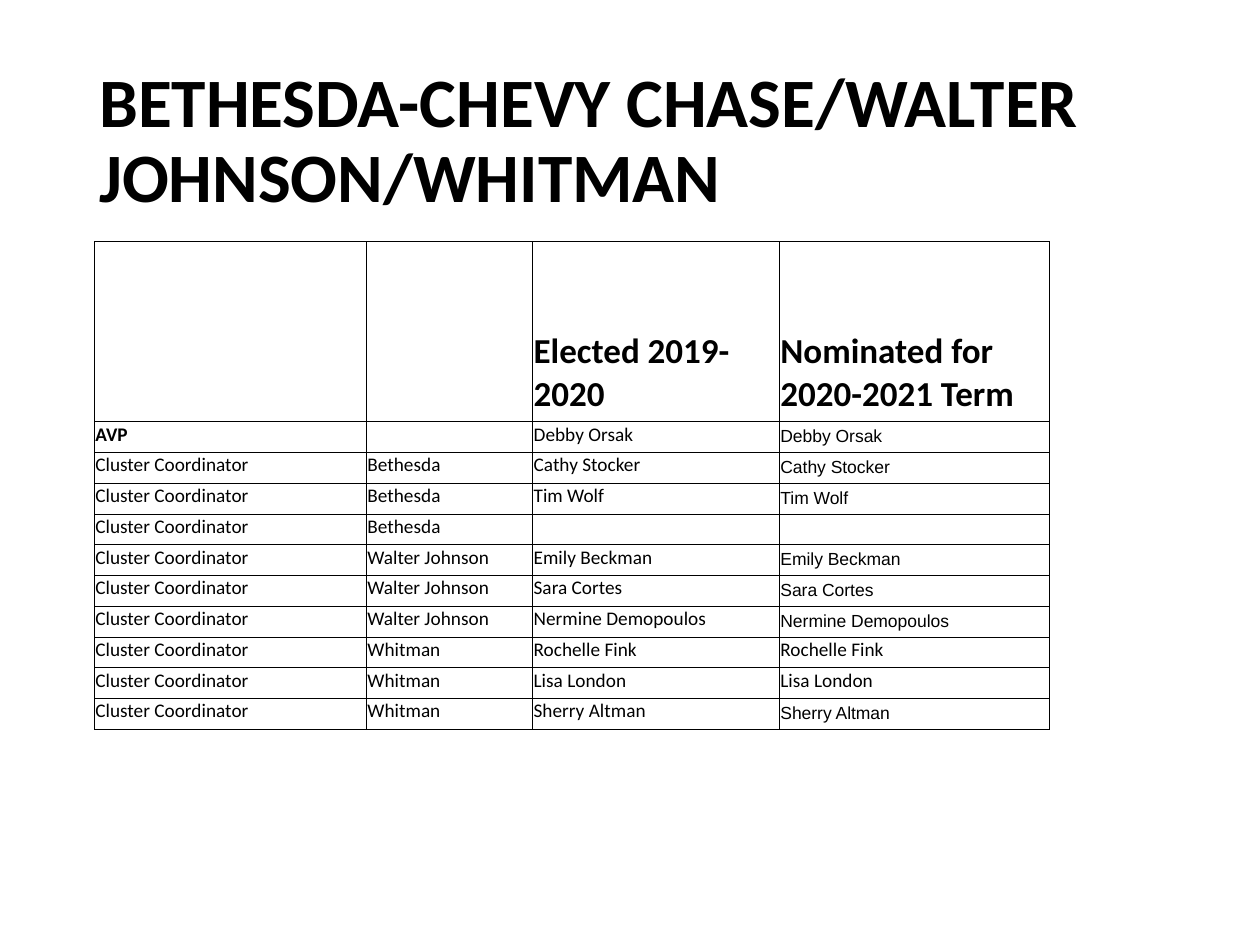
from dataclasses import dataclass

import pptx
import pptx.dml.color
import pptx.enum.text
import pptx.oxml
import pptx.oxml.ns
import pptx.util

Pt = pptx.util.Pt
BLACK = pptx.dml.color.RGBColor(0, 0, 0)
WHITE = pptx.dml.color.RGBColor(255, 255, 255)

COLUMN_WIDTHS = (155.5, 95, 141, 154)
HEADER_HEIGHT = 103
ROW_HEIGHT = 17.4
BORDER_WIDTH = 0.5
HEADERS = ("", "", "Elected 2019-2020", "Nominated for 2020-2021 Term")
WHITE_CELLS = {(1, 0), (1, 1), (2, 0), (2, 1), (2, 2), (10, 2)}


@dataclass(frozen=True)
class Style:
    size: float
    name: str = "Calibri"
    bold: bool = False


TITLE = Style(39.6, bold=True)
HEADER = Style(20, bold=True)
ROLE = Style(11, bold=True)
BODY = Style(11)
NOMINEE = Style(10, "Arial")


@dataclass(frozen=True)
class Post:
    """A post whose holder is nominated again for the next term."""
    role: str
    school: str
    person: str
    role_style: Style = BODY
    nominee_style: Style = NOMINEE


COORDINATOR = "Cluster Coordinator"
POSTS = (
    Post("AVP", "", "Debby Orsak", role_style=ROLE),
    Post(COORDINATOR, "Bethesda", "Cathy Stocker"),
    Post(COORDINATOR, "Bethesda", "Tim Wolf"),
    Post(COORDINATOR, "Bethesda", ""),
    Post(COORDINATOR, "Walter Johnson", "Emily Beckman"),
    Post(COORDINATOR, "Walter Johnson", "Sara Cortes"),
    Post(COORDINATOR, "Walter Johnson", "Nermine Demopoulos"),
    Post(COORDINATOR, "Whitman", "Rochelle Fink", nominee_style=BODY),
    Post(COORDINATOR, "Whitman", "Lisa London", nominee_style=BODY),
    Post(COORDINATOR, "Whitman", "Sherry Altman"),
)


def set_text(tf, text: str, style: Style) -> None:
    tf.text = text
    p = tf.paragraphs[0]
    p.alignment = pptx.enum.text.PP_ALIGN.LEFT
    for r in p.runs:
        r.font.size = Pt(style.size)
        r.font.name = style.name
        r.font.bold = style.bold
        r.font.color.rgb = BLACK
    if not text:
        # An empty cell needs a small end mark, or its row grows.
        end = pptx.oxml.parse_xml(
            f'<a:endParaRPr {pptx.oxml.ns.nsdecls("a")} sz="{style.size * 100:.0f}"/>')
        p._p.append(end)


def add_borders(cell) -> None:
    tcPr = cell._tc.get_or_add_tcPr()
    for i, side in enumerate(("lnL", "lnR", "lnT", "lnB")):
        tcPr.insert(i, pptx.oxml.parse_xml(
            f'<a:{side} {pptx.oxml.ns.nsdecls("a")} w="{Pt(BORDER_WIDTH)}">'
            f'<a:solidFill><a:srgbClr val="{BLACK}"/></a:solidFill></a:{side}>'))


def fill_cell(cell, text: str, style: Style, white: bool) -> None:
    cell.margin_left = cell.margin_right = cell.margin_top = Pt(0.5)
    cell.margin_bottom = Pt(3.5)
    cell.vertical_anchor = pptx.enum.text.MSO_ANCHOR.BOTTOM
    set_text(cell.text_frame, text, style)
    if white:
        cell.fill.solid()
        cell.fill.fore_color.rgb = WHITE
    else:
        cell.fill.background()
    add_borders(cell)


def add_title(slide) -> None:
    sp = slide.shapes.title
    sp.left, sp.top, sp.width, sp.height = Pt(49.5), Pt(29), Pt(621), Pt(104.5)
    tf = sp.text_frame
    set_text(tf, "BETHESDA-CHEVY CHASE/WALTER JOHNSON/WHITMAN", TITLE)
    tf.word_wrap = True
    tf.auto_size = pptx.enum.text.MSO_AUTO_SIZE.NONE
    tf.vertical_anchor = pptx.enum.text.MSO_ANCHOR.MIDDLE
    tf.paragraphs[0].line_spacing = 0.9


def add_posts_table(slide) -> None:
    rows = [[(text, HEADER) for text in HEADERS]]
    rows += [[(post.role, post.role_style), (post.school, BODY),
              (post.person, BODY), (post.person, post.nominee_style)]
             for post in POSTS]
    height = HEADER_HEIGHT + ROW_HEIGHT * len(POSTS)
    table = slide.shapes.add_table(
        len(rows), len(COLUMN_WIDTHS), Pt(54), Pt(138),
        Pt(sum(COLUMN_WIDTHS)), Pt(height)).table
    table.first_row = table.horz_banding = False
    for column, width in zip(table.columns, COLUMN_WIDTHS):
        column.width = Pt(width)
    for i, row in enumerate(rows):
        table.rows[i].height = Pt(ROW_HEIGHT if i else HEADER_HEIGHT)
        for j, (text, style) in enumerate(row):
            fill_cell(table.cell(i, j), text, style, (i, j) in WHITE_CELLS)


def main() -> None:
    prs = pptx.Presentation()
    prs.slide_width, prs.slide_height = Pt(720), Pt(540)
    slide = prs.slides.add_slide(prs.slide_layouts.get_by_name("Title Only"))
    add_title(slide)
    add_posts_table(slide)
    prs.save("out.pptx")


if __name__ == "__main__":
    main()
